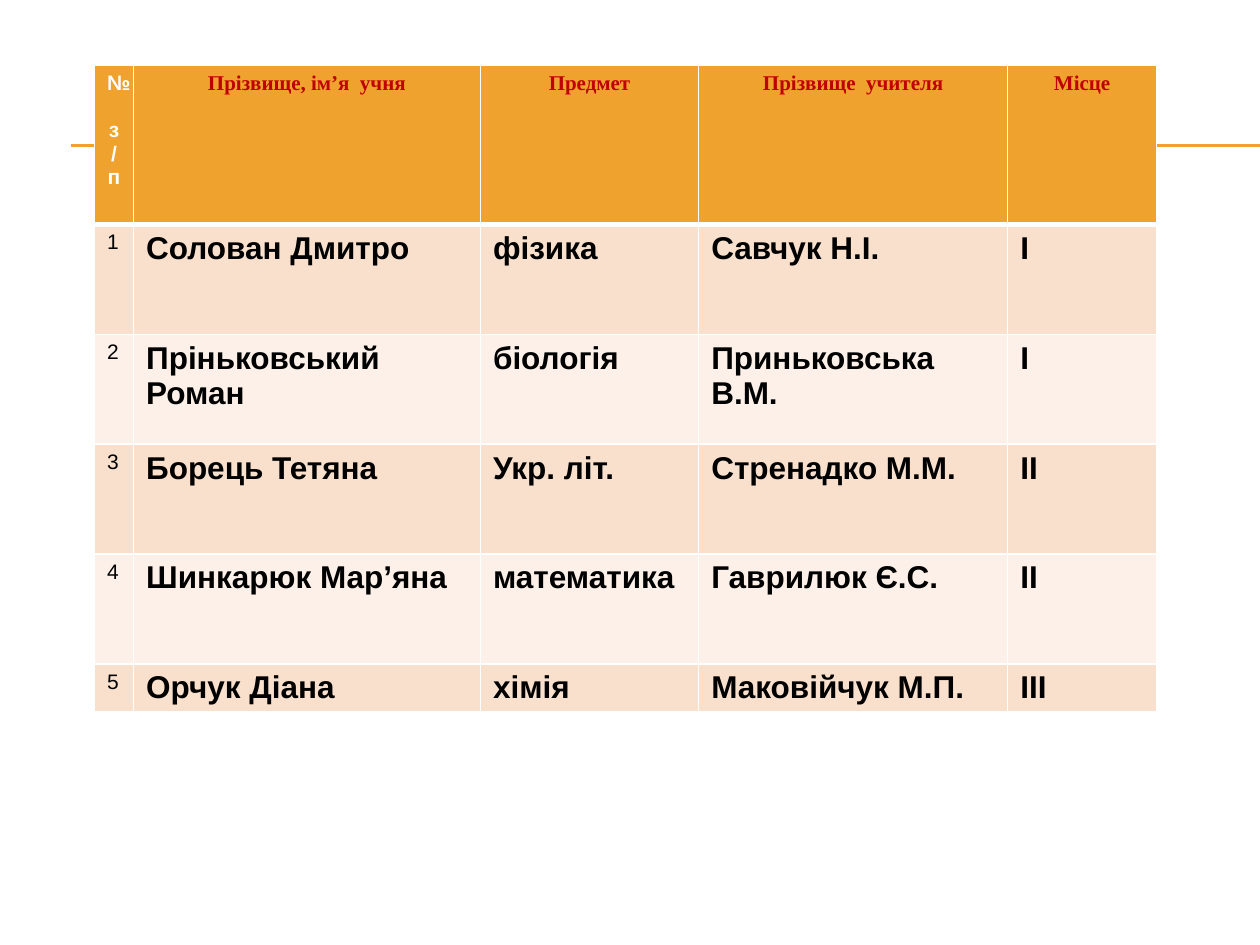
from pptx import Presentation
from pptx.dml.color import RGBColor
from pptx.enum.shapes import MSO_CONNECTOR
from pptx.enum.text import PP_ALIGN
from pptx.oxml.ns import qn
from pptx.util import Inches, Pt
from lxml.etree import SubElement

AMBER, WHITE, BLACK, RED = "F0A22E", "FFFFFF", "000000", "C00000"
BANDS = ["F9E0CD", "FCF0E8"]
COLUMN_WIDTHS = [0.31, 2.75, 1.73, 2.45, 1.18]
ROW_HEIGHTS = [1.26] + [0.87] * 4 + [0.38]
HEADINGS = [
    ["№ ", "з/п"],
    ["Прізвище, ім’я  учня"],
    ["Предмет"],
    ["Прізвище  учителя"],
    ["Місце"],
]
WINNERS = [
    ["1", "Солован Дмитро", "фізика", "Савчук Н.І.", "І"],
    ["2", "Пріньковський Роман", "біологія", "Приньковська В.М.", "І"],
    ["3", "Борець Тетяна", "Укр. літ.", "Стренадко М.М.", "ІІ"],
    ["4", "Шинкарюк Мар’яна", "математика", "Гаврилюк Є.С.", "ІІ"],
    ["5", "Орчук Діана", "хімія", "Маковійчук М.П.", "ІІІ"],
]


def color(value):
    """Turn a hex string into a colour."""
    return RGBColor.from_string(value)


def add_rule(slide, left, top, width):
    """Draw one thin horizontal amber rule."""
    rule = slide.shapes.add_connector(
        MSO_CONNECTOR.STRAIGHT, Inches(left), Inches(top), Inches(left + width), Inches(top)
    )
    rule.line.color.rgb = color(AMBER)
    rule.line.width = Pt(0.75)
    SubElement(rule._element.spPr, qn("a:effectLst"))


def set_borders(cell, top, bottom):
    """Give a cell white borders, with top and bottom widths in points."""
    properties = cell._tc.get_or_add_tcPr()
    for side, width in (("lnL", 1), ("lnR", 1), ("lnT", top), ("lnB", bottom)):
        border = SubElement(properties, qn(f"a:{side}"), w=str(Pt(width)))
        fill = SubElement(border, qn("a:solidFill"))
        SubElement(fill, qn("a:srgbClr"), val=WHITE)


def fill_cell(cell, lines, background, font_name, size, bold, ink, align):
    """Fill a cell and write its lines in one style."""
    cell.fill.solid()
    cell.fill.fore_color.rgb = color(background)
    frame = cell.text_frame
    for index, line in enumerate(lines):
        paragraph = frame.add_paragraph() if index else frame.paragraphs[0]
        paragraph.alignment = align
        run = paragraph.add_run()
        run.text = line
        run.font.name = font_name
        run.font.size = Pt(size)
        run.font.bold = bold
        run.font.color.rgb = color(ink)


def add_winners_table(slide, left, top, width, height):
    """Place the table of winners in the given box."""
    table = slide.shapes.add_table(
        len(ROW_HEIGHTS), len(COLUMN_WIDTHS),
        Inches(left), Inches(top), Inches(width), Inches(height),
    ).table
    for column, share in zip(table.columns, COLUMN_WIDTHS):
        column.width = Inches(width * share / sum(COLUMN_WIDTHS))
    for row, share in zip(table.rows, ROW_HEIGHTS):
        row.height = Inches(height * share / sum(ROW_HEIGHTS))
    for index, heading in enumerate(HEADINGS):
        cell = table.cell(0, index)
        set_borders(cell, 1, 3)
        font_name, ink = ("Times New Roman", RED) if index else ("Arial", WHITE)
        fill_cell(cell, heading, AMBER, font_name, 12, True, ink, PP_ALIGN.CENTER)
    for number, winner in enumerate(WINNERS, 1):
        for index, entry in enumerate(winner):
            cell = table.cell(number, index)
            set_borders(cell, 3 if number == 1 else 1, 1)
            size = 18 if index else 12
            band = BANDS[(number - 1) % 2]
            fill_cell(cell, [entry], band, "Arial", size, index > 0, BLACK, PP_ALIGN.LEFT)


def main():
    """Build and save the slide."""
    presentation = Presentation()
    presentation.slide_width, presentation.slide_height = Inches(10), Inches(7.5)
    slide = presentation.slides.add_slide(presentation.slide_layouts[6])
    for top in (1.15, 1.16):
        add_rule(slide, 0.56, top, 9.44)
    add_winners_table(slide, 0.75, 0.52, 8.43, 5.13)
    presentation.save("out.pptx")


if __name__ == "__main__":
    main()
